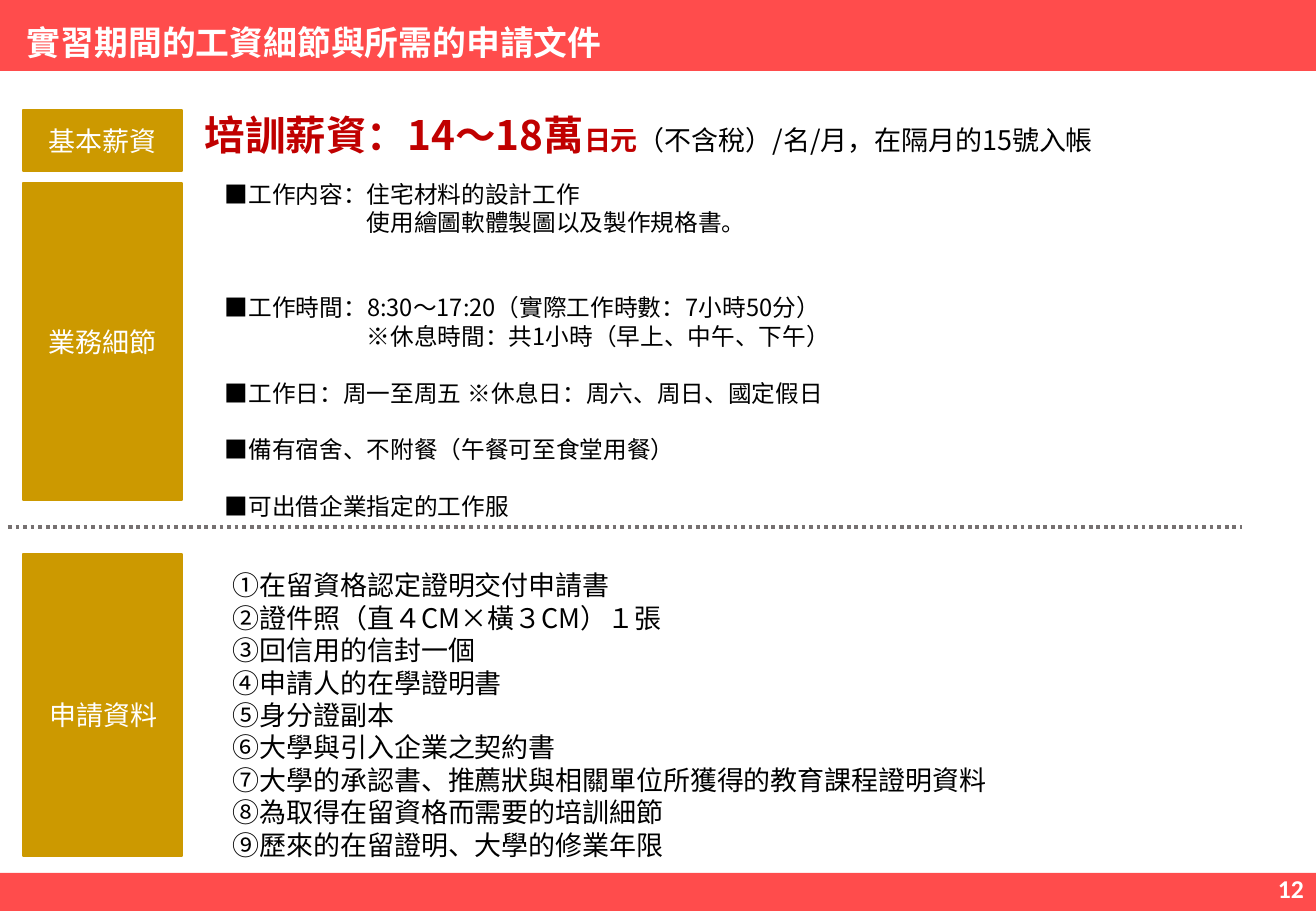
from dataclasses import dataclass

from lxml import etree
from pptx import Presentation
from pptx import util as u
from pptx.dml.color import RGBColor
from pptx.enum import dml, shapes, text
from pptx.oxml.ns import qn

EMU_PER_PX = 7526
SLIDE_W, SLIDE_H = 1316, 911
LABEL_X, LABEL_W = 23, 159


@dataclass(frozen=True)
class Theme:
    font: str = "Noto Sans CJK JP"
    number_font: str = "Calibri"
    band: str = "FF0000"
    band_alpha: int = 70
    label: str = "CC9900"
    rule: str = "767171"
    accent: str = "C00000"
    ink: str = "000000"
    white: str = "FFFFFF"
    headline: float = 24
    title: float = 20
    body: float = 16
    number: float = 15.2
    detail: float = 14
    leading: float = 1.2


T = Theme()

# (text, blank lines above, indent in px)
DETAILS = [
    ("■工作内容：住宅材料的設計工作", 0, 0),
    ("使用繪圖軟體製圖以及製作規格書。", 0, 142),
    ("■工作時間：8:30～17:20（實際工作時數：7小時50分）", 2, 0),
    ("※休息時間：共1小時（早上、中午、下午）", 0, 142),
    ("■工作日：周一至周五\t※休息日：周六、周日、國定假日", 1, 0),
    ("■備有宿舍、不附餐（午餐可至食堂用餐）", 1, 0),
    ("■可出借企業指定的工作服", 1, 0),
]
DAY_OFF_TAB = 307

DOCUMENTS = [
    "①在留資格認定證明交付申請書",
    "②證件照（直４CM×橫３CM）１張",
    "③回信用的信封一個",
    "④申請人的在學證明書",
    "⑤身分證副本",
    "⑥大學與引入企業之契約書",
    "⑦大學的承認書、推薦狀與相關單位所獲得的教育課程證明資料",
    "⑧為取得在留資格而需要的培訓細節",
    "⑨歷來的在留證明、大學的修業年限",
]


def px(n):
    return u.Emu(n * EMU_PER_PX)


def rgb(color):
    return RGBColor.from_string(color)


def style_run(r, size, color, bold=False, font=T.font):
    r.font.size = u.Pt(size)
    r.font.color.rgb = rgb(color)
    r.font.bold = bold
    r.font.name = font
    etree.SubElement(r.font._element, qn("a:ea"), typeface=font)


def add_rect(slide, x, y, w, h, color):
    sp = slide.shapes.add_shape(shapes.MSO_SHAPE.RECTANGLE,
                                px(x), px(y), px(w), px(h))
    sp.shadow.inherit = False
    sp.fill.solid()
    sp.fill.fore_color.rgb = rgb(color)
    return sp


def add_band(slide, y, h):
    sp = add_rect(slide, 0, y, SLIDE_W, h, T.band)
    sp.line.fill.background()
    clr = sp.fill._xPr.find(".//" + qn("a:srgbClr"))
    etree.SubElement(clr, qn("a:alpha"), val=str(T.band_alpha * 1000))


def add_label_block(slide, y, h):
    sp = add_rect(slide, LABEL_X, y, LABEL_W, h, T.label)
    sp.line.color.rgb = rgb(T.label)
    sp.line.width = u.Pt(1)
    return sp


def write_centred(sp, words):
    tf = sp.text_frame
    tf.word_wrap = True
    tf.vertical_anchor = text.MSO_ANCHOR.MIDDLE
    p = tf.paragraphs[0]
    p.text = words
    p.alignment = text.PP_ALIGN.CENTER
    style_run(p.runs[0], T.body, T.white)


def add_text_box(slide, x, y, w, h):
    sp = slide.shapes.add_textbox(px(x), px(y), px(w), px(h))
    sp.text_frame.word_wrap = True
    return sp


def add_line_of_runs(slide, x, y, w, h, runs):
    """One line of (words, size, color, bold) runs, led by the first size."""
    p = add_text_box(slide, x, y, w, h).text_frame.paragraphs[0]
    p.line_spacing = u.Pt(runs[0][1] * T.leading)
    for words, size, color, bold in runs:
        r = p.add_run()
        r.text = words
        style_run(r, size, color, bold)


def add_paragraphs(slide, x, y, w, h, items, size):
    """Paragraphs from (words, blank lines above, indent) items."""
    tf = add_text_box(slide, x, y, w, h).text_frame
    pitch = size * T.leading
    for i, (words, blanks, indent) in enumerate(items):
        p = tf.add_paragraph() if i else tf.paragraphs[0]
        p.text = words
        p.line_spacing = u.Pt(pitch)
        p.space_before = u.Pt(blanks * pitch)
        pPr = p._p.get_or_add_pPr()
        pPr.set("marL", str(px(indent)))
        pPr.set("indent", "0")
        if "\t" in words:
            tabs = etree.SubElement(pPr, qn("a:tabLst"))
            etree.SubElement(tabs, qn("a:tab"), pos=str(px(DAY_OFF_TAB)), algn="l")
        for r in p.runs:
            style_run(r, size, T.ink)


def add_dotted_rule(slide, x1, x2, y):
    line = slide.shapes.add_connector(shapes.MSO_CONNECTOR.STRAIGHT,
                                      px(x1), px(y), px(x2), px(y))
    line.line.color.rgb = rgb(T.rule)
    line.line.width = u.Pt(2.25)
    line.line.dash_style = dml.MSO_LINE.ROUND_DOT
    etree.SubElement(line._element.spPr, qn("a:effectLst"))


def add_page_number(slide, number):
    tf = add_text_box(slide, 1020, 864, 296, 49).text_frame
    tf.vertical_anchor = text.MSO_ANCHOR.MIDDLE
    p = tf.paragraphs[0]
    p.text = number
    p.alignment = text.PP_ALIGN.RIGHT
    style_run(p.runs[0], T.number, T.white, True, T.number_font)


def main():
    prs = Presentation()
    prs.slide_width, prs.slide_height = px(SLIDE_W), px(SLIDE_H)
    slide = prs.slides.add_slide(prs.slide_layouts[6])

    add_band(slide, 0, 71)
    add_band(slide, 873, 38)
    add_line_of_runs(slide, 15, 16, 640, 53, [
        ("實習期間的工資細節與所需的申請文件", T.title, T.white, True)])
    add_page_number(slide, "12")

    write_centred(add_label_block(slide, 110, 61), "基本薪資")
    add_line_of_runs(slide, 193, 104, 1123, 61, [
        ("培訓薪資：14〜18萬", T.headline, T.accent, True),
        ("日元", T.body, T.accent, True),
        ("（不含稅）/名/月，在隔月的15號入帳", T.body, T.ink, False)])

    write_centred(add_label_block(slide, 183, 317), "業務細節")
    add_paragraphs(slide, 213, 174, 1030, 356, DETAILS, T.detail)

    add_dotted_rule(slide, 8, 1242, 527)

    add_label_block(slide, 554, 302)
    write_centred(add_text_box(slide, 24, 692, 159, 45), "申請資料")
    add_paragraphs(slide, 221, 563, 872, 306,
                   [(words, 0, 0) for words in DOCUMENTS], T.body)

    prs.save("out.pptx")


if __name__ == "__main__":
    main()
